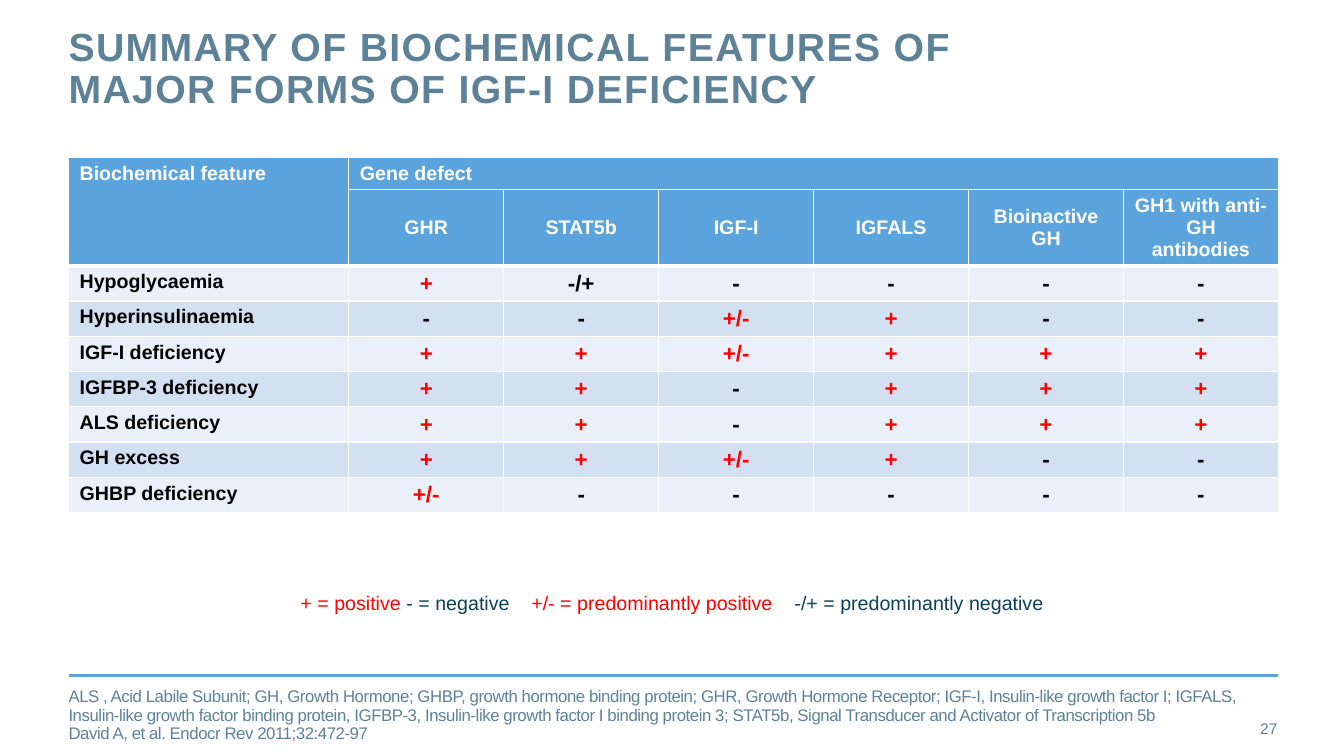
from lxml import etree
from pptx import Presentation, util as u
from pptx.dml.color import RGBColor
from pptx.enum import shapes, text
from pptx.oxml import ns

WIDTH, HEIGHT = 13.33, 7.5
LEFT, CONTENT = 0.68, 12
BLUE, SLATE, NAVY, RED = "5BA3DD", "5D8298", "0B4055", "FF0000"
WHITE, BLACK = "FFFFFF", "000000"
BANDS = ("EAF0F9", "D2E0F2")
ALIGN, ANCHOR = text.PP_ALIGN, text.MSO_ANCHOR

GENES = ["GHR", "STAT5b", "IGF-I", "IGFALS", "Bioinactive GH",
         "GH1 with anti-GH antibodies"]
FEATURES = [
    ("Hypoglycaemia", "+ -/+ - - - -"),
    ("Hyperinsulinaemia", "- - +/- + - -"),
    ("IGF-I deficiency", "+ + +/- + + +"),
    ("IGFBP-3 deficiency", "+ + - + + +"),
    ("ALS deficiency", "+ + - + + +"),
    ("GH excess", "+ + +/- + - -"),
    ("GHBP deficiency", "+/- - - - - -"),
]
LEGEND = [("+ = positive ", RED), ("- = negative\t", NAVY),
          ("+/- = predominantly positive\t", RED),
          ("-/+ = predominantly negative", NAVY)]
NOTES = [
    "ALS , Acid Labile Subunit; GH, Growth Hormone; GHBP, growth hormone "
    "binding protein; GHR, Growth Hormone Receptor; IGF-I, Insulin-like growth "
    "factor I; IGFALS, Insulin-like growth factor binding protein, IGFBP-3, "
    "Insulin-like growth factor I binding protein 3; STAT5b, Signal Transducer "
    "and Activator of Transcription 5b",
    "David A, et al. Endocr Rev 2011;32:472-97",
]


def colour(value):
    """Turn a hex string into a colour."""
    return RGBColor.from_string(value)


def inches(*lengths):
    """Convert lengths in inches to slide units."""
    return [u.Inches(length) for length in lengths]


def write(para, words, size=14, ink=BLACK, bold=False, align=ALIGN.LEFT,
          spacing=None, tracking=0):
    """Add a formatted span to a paragraph."""
    para.alignment = align
    if spacing:
        para.line_spacing = spacing
    span = para.add_run()
    span.text = words
    span.font.name, span.font.size, span.font.bold = "Arial", u.Pt(size), bold
    span.font.color.rgb = colour(ink)
    if tracking:
        span.font._element.set("spc", str(round(tracking * 100)))


def set_frame(box, anchor=ANCHOR.TOP, margins=(0, 0, 0, 0)):
    """Prepare the text frame of a box and return it."""
    frame = box.text_frame
    frame.word_wrap, frame.auto_size = True, text.MSO_AUTO_SIZE.NONE
    frame.vertical_anchor = anchor
    (frame.margin_left, frame.margin_top,
     frame.margin_right, frame.margin_bottom) = inches(*margins)
    return frame


def add_title(page, area):
    """Place the heading in the title placeholder."""
    title = page.shapes.title
    title.left, title.top, title.width, title.height = inches(*area)
    write(set_frame(title).paragraphs[0],
          "SUMMARY OF BIOCHEMICAL FEATURES OF MAJOR FORMS OF IGF-I DEFICIENCY",
          size=28, ink=SLATE, bold=True, spacing=u.Pt(30), tracking=1)


def set_borders(cell, top=1, bottom=1):
    """Give a cell white borders."""
    properties = cell._tc.get_or_add_tcPr()
    for side, width in (("L", 1), ("R", 1), ("T", top), ("B", bottom)):
        line = etree.SubElement(properties, ns.qn(f"a:ln{side}"),
                                w=str(u.Pt(width)))
        fill = etree.SubElement(line, ns.qn("a:solidFill"))
        etree.SubElement(fill, ns.qn("a:srgbClr"), val=WHITE)


def fill_cell(cell, words, row, column):
    """Format one table cell by its place in the grid."""
    heading = row < 2
    set_borders(cell, top=3 if row == 2 else 1, bottom=3 if row == 1 else 1)
    cell.fill.solid()
    cell.fill.fore_color.rgb = colour(BLUE if heading else BANDS[row % 2])
    cell.margin_left = cell.margin_right = u.Inches(0.11)
    cell.margin_top = cell.margin_bottom = u.Inches(0.05)
    centred = row > 0 and column > 0
    cell.vertical_anchor = ANCHOR.MIDDLE if centred else ANCHOR.TOP
    mark = centred and not heading
    ink = WHITE if heading else RED if mark and words[0] == "+" else BLACK
    if words:
        write(cell.text_frame.paragraphs[0], words, size=16 if mark else 14,
              ink=ink, bold=True, align=ALIGN.CENTER if centred else ALIGN.LEFT)


def add_feature_table(page, area):
    """Build the table of features by gene defect."""
    rows = [["Biochemical feature", "Gene defect"] + [""] * (len(GENES) - 1),
            [""] + GENES]
    rows += [[name] + marks.split() for name, marks in FEATURES]
    table = page.shapes.add_table(len(rows), len(rows[0]),
                                  *inches(*area)).table
    first = 2.78
    widths = [first] + [(area[2] - first) / len(GENES)] * len(GENES)
    for column, width in zip(table.columns, widths):
        column.width = u.Inches(width)
    heights = [0.32, 0.75] + [0.35] * len(FEATURES)
    for line, height in zip(table.rows, heights):
        line.height = u.Inches(height)
    for row, entries in enumerate(rows):
        for column, words in enumerate(entries):
            fill_cell(table.cell(row, column), words, row, column)
    table.cell(0, 0).merge(table.cell(1, 0))
    table.cell(0, 1).merge(table.cell(0, len(GENES)))


def add_legend(page, area):
    """Explain the marks on one tabbed line."""
    box = page.shapes.add_textbox(*inches(*area))
    para = set_frame(box, margins=(1.6, 0.05, 0.1, 0.05)).paragraphs[0]
    tabs = etree.SubElement(para._p.get_or_add_pPr(), ns.qn("a:tabLst"))
    for stop in (2.29, 4.9):
        etree.SubElement(tabs, ns.qn("a:tab"), pos=str(u.Inches(stop)),
                         algn="l")
    for words, ink in LEGEND:
        write(para, words, ink=ink)


def add_footer(page, area):
    """Place the rule, the notes and the page number."""
    left, top, width, height = area
    rule = page.shapes.add_connector(
        shapes.MSO_CONNECTOR.STRAIGHT, *inches(left, top, left + width, top))
    rule.line.color.rgb, rule.line.width = colour(BLUE), u.Pt(2)
    etree.SubElement(rule._element.spPr, ns.qn("a:effectLst"))
    notes = page.shapes.add_textbox(
        *inches(left, top + 0.2, width - 0.26, 0.4))
    frame = set_frame(notes, ANCHOR.MIDDLE)
    for index, words in enumerate(NOTES):
        para = frame.add_paragraph() if index else frame.paragraphs[0]
        write(para, words, size=12, ink=SLATE, spacing=0.9, tracking=-0.3)
    number = page.shapes.add_textbox(
        *inches(left + width - 0.87, top + height - 0.4, 0.86, 0.4))
    write(set_frame(number, ANCHOR.MIDDLE).paragraphs[0], "27", size=11,
          ink=SLATE, align=ALIGN.RIGHT)


def main():
    """Build and save the deck."""
    deck = Presentation()
    deck.slide_width, deck.slide_height = inches(WIDTH, HEIGHT)
    page = deck.slides.add_slide(deck.slide_layouts[5])
    add_footer(page, (LEFT, 6.7, CONTENT, 0.73))
    add_feature_table(page, (LEFT, 1.56, CONTENT, 3.52))
    add_title(page, (LEFT, 0.27, 9.56, 0.88))
    add_legend(page, (1.38, 5.81, 10.58, 0.34))
    deck.save("out.pptx")


if __name__ == "__main__":
    main()
